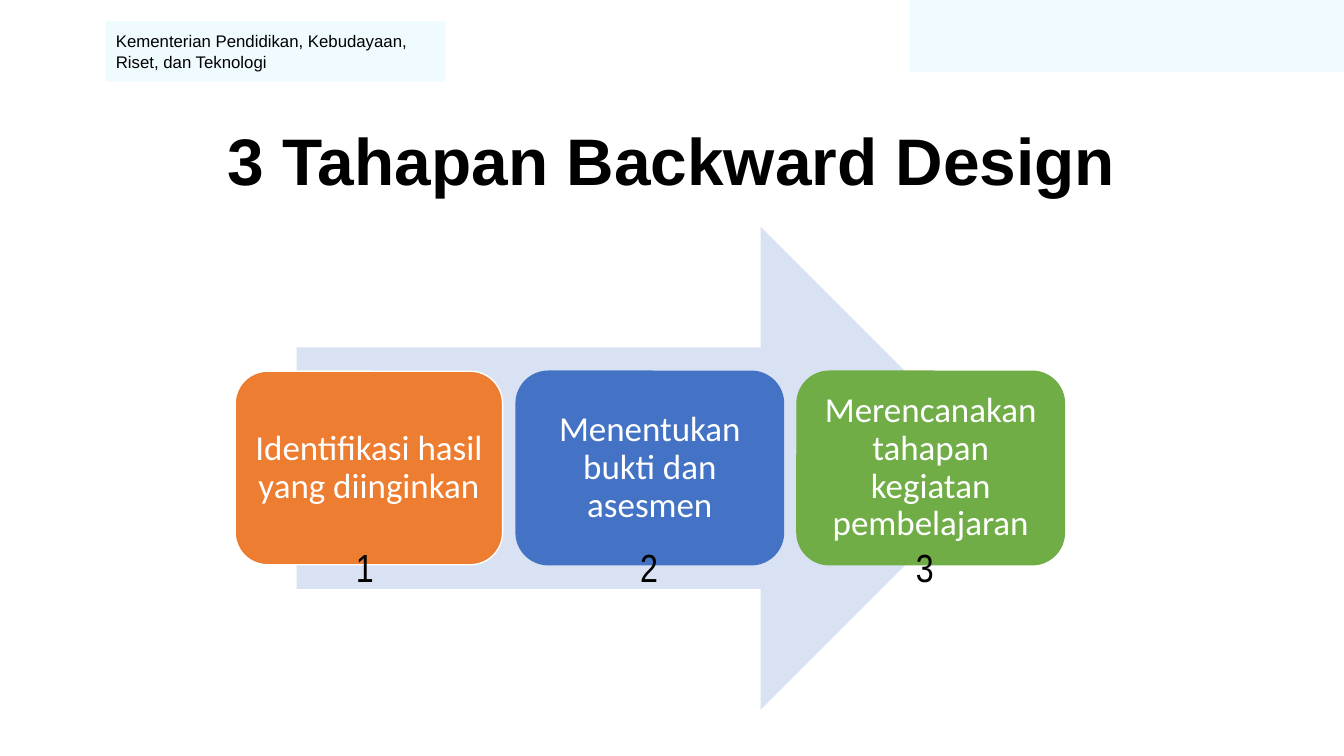
from dataclasses import dataclass

from pptx import Presentation
from pptx.dml.color import RGBColor
from pptx.enum.shapes import MSO_SHAPE
from pptx.enum.text import MSO_ANCHOR, MSO_AUTO_SIZE, PP_ALIGN
from pptx.shapes.autoshape import Shape
from pptx.slide import Slide
from pptx.util import Inches, Pt

COLORS = {
    "black": "000000",
    "white": "FFFFFF",
    "pale": "F0FBFF",
    "arrow": "D8E2F3",
    "orange": "ED7D31",
    "blue": "4472C4",
    "green": "70AD47",
}
SLIDE_WIDTH, SLIDE_HEIGHT = Inches(13.33), Inches(7.5)
COLUMN, ROW = SLIDE_WIDTH / 100, SLIDE_HEIGHT / 100
FIRST_STAGE, STAGE_PITCH = 17.5, 20.9


@dataclass(frozen=True)
class Area:
    column: float
    row: float
    columns: float
    rows: float

    def box(self) -> tuple[int, int, int, int]:
        return (round(self.column * COLUMN), round(self.row * ROW),
                round(self.columns * COLUMN), round(self.rows * ROW))


@dataclass(frozen=True)
class TextStyle:
    font: str
    size: float
    color: str
    align: PP_ALIGN = PP_ALIGN.CENTER
    anchor: MSO_ANCHOR = MSO_ANCHOR.MIDDLE
    spacing: float | None = None
    bold: bool = False
    inset_columns: float = 0.75
    inset_rows: float = 1.33


@dataclass(frozen=True)
class Stage:
    label: str
    fill: str
    line: str
    number_column: float


HEADER_STYLE = TextStyle("Arial", 12, "black", align=PP_ALIGN.LEFT)
TITLE_STYLE = TextStyle("Arial", 47, "black", spacing=0.9, bold=True, inset_rows=0.67)
STAGE_STYLE = TextStyle("Calibri", 25, "white", spacing=0.9, inset_columns=0.6)
NUMBER_STYLE = TextStyle("Arial Narrow", 28, "black", anchor=MSO_ANCHOR.TOP)

STAGES = [
    Stage("Identifikasi hasil yang diinginkan", "orange", "white", 25.35),
    Stage("Menentukan bukti dan asesmen", "blue", "blue", 46.5),
    Stage("Merencanakan tahapan kegiatan pembelajaran", "green", "green", 67),
]


def rgb(name: str) -> RGBColor:
    return RGBColor.from_string(COLORS[name])


def write(holder: Shape, text: str, style: TextStyle) -> None:
    frame = holder.text_frame
    frame.text = text
    frame.word_wrap = True
    frame.auto_size = MSO_AUTO_SIZE.NONE
    frame.vertical_anchor = style.anchor
    frame.margin_left = frame.margin_right = round(style.inset_columns * COLUMN)
    frame.margin_top = frame.margin_bottom = round(style.inset_rows * ROW)
    for paragraph in frame.paragraphs:
        paragraph.alignment = style.align
        paragraph.line_spacing = style.spacing
        for run in paragraph.runs:
            run.font.name = style.font
            run.font.size = Pt(style.size)
            run.font.bold = style.bold
            run.font.color.rgb = rgb(style.color)


def add_block(slide: Slide, preset: MSO_SHAPE, area: Area, fill: str,
              line: str | None = None) -> Shape:
    block = slide.shapes.add_shape(preset, *area.box())
    block.shadow.inherit = False
    block.fill.solid()
    block.fill.fore_color.rgb = rgb(fill)
    if line:
        block.line.color.rgb = rgb(line)
        block.line.width = Pt(1)
    else:
        block.line.fill.background()
    return block


def add_title(slide: Slide, text: str) -> None:
    title = slide.shapes.title
    title.left, title.top, title.width, title.height = Area(6.9, 13.65, 86.2, 16.25).box()
    write(title, text, TITLE_STYLE)


def add_stage(slide: Slide, index: int, stage: Stage) -> None:
    area = Area(FIRST_STAGE + index * STAGE_PITCH, 49.1, 19.9, 25.6)
    block = add_block(slide, MSO_SHAPE.ROUNDED_RECTANGLE, area, stage.fill, stage.line)
    write(block, stage.label, STAGE_STYLE)


def add_number(slide: Slide, number: int, stage: Stage) -> None:
    area = Area(stage.number_column, 70.5, 3.6, 8.9)
    write(slide.shapes.add_textbox(*area.box()), str(number), NUMBER_STYLE)


def main() -> None:
    deck = Presentation()
    deck.slide_width, deck.slide_height = SLIDE_WIDTH, SLIDE_HEIGHT
    slide = deck.slides.add_slide(deck.slide_layouts.get_by_name("Title Only"))

    add_block(slide, MSO_SHAPE.RECTANGLE, Area(67.65, 0, 32.35, 9.5), "pale")
    ministry = add_block(slide, MSO_SHAPE.RECTANGLE, Area(7.87, 2.8, 25.25, 8), "pale")
    write(ministry, "Kementerian Pendidikan, Kebudayaan, Riset, dan Teknologi", HEADER_STYLE)
    add_title(slide, "3 Tahapan Backward Design")

    add_block(slide, MSO_SHAPE.RIGHT_ARROW, Area(22.07, 30, 52.5, 63.87), "arrow")
    for index, stage in enumerate(STAGES):
        add_stage(slide, index, stage)
    for number, stage in enumerate(STAGES, start=1):
        add_number(slide, number, stage)

    deck.save("out.pptx")


if __name__ == "__main__":
    main()
